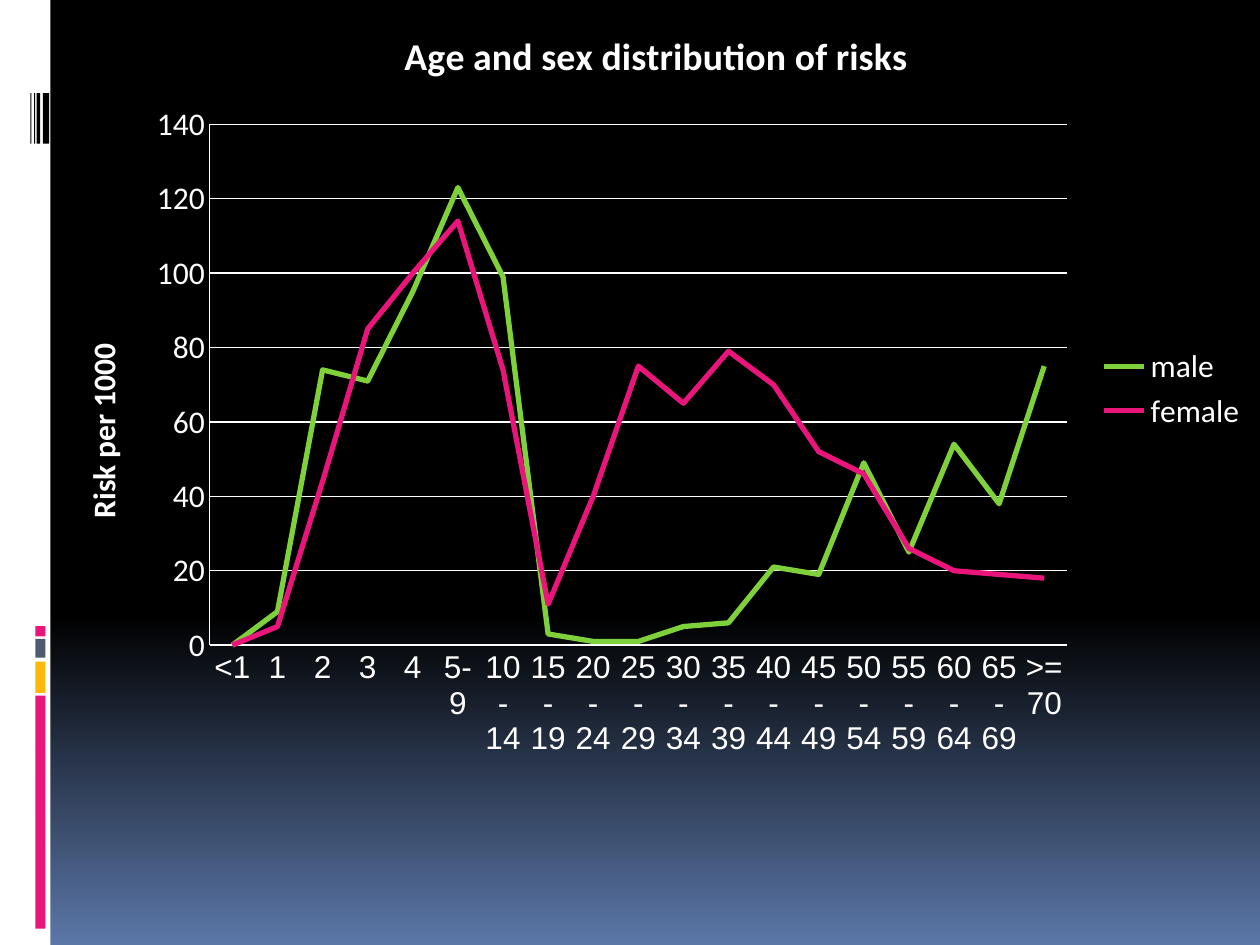
from lxml import etree
from pptx import Presentation
from pptx import util as u
from pptx.chart.data import CategoryChartData
from pptx.dml.color import RGBColor
from pptx.enum import chart as ch, shapes
from pptx.oxml.ns import qn

WHITE, BLACK, PINK, GREEN = "FFFFFF", "000000", "EA157A", "7FD13B"
AGES = (["<1", "1", "2", "3", "4", "5-9"]
        + [f"{a}-{a + 4}" for a in range(10, 70, 5)] + [">=70"])
RISKS = [
    ("male", GREEN, [0, 9, 74, 71, 95, 123, 99, 3, 1, 1, 5, 6, 21, 19, 49, 25, 54, 38, 75]),
    ("female", PINK, [0, 5, 44, 85, 100, 114, 74, 11, 40, 75, 65, 79, 70, 52, 46, 26, 20, 19, 18]),
]


def rgb(code):
    return RGBColor.from_string(code)


def bar(slide, box, code):
    """Add a plain filled rectangle without an outline."""
    shape = slide.shapes.add_shape(shapes.MSO_SHAPE.RECTANGLE, *map(u.Inches, box))
    shape.shadow.inherit = False
    shape.fill.solid()
    shape.fill.fore_color.rgb = rgb(code)
    shape.line.fill.background()


def backdrop(slide):
    fill = slide.background.fill
    fill.gradient()
    fill.gradient_angle = 270
    for stop, (place, code) in zip(fill.gradient_stops, [(0.65, BLACK), (1, "5B77A8")]):
        stop.position = place
        stop.color.rgb = rgb(code)


def margin(slide, left, top, wide, high):
    """Draw the white side strip with its colour blocks and thin stripes."""
    bar(slide, (left, top, wide, high), WHITE)
    for y, tall, code in [(5.52, 1.85, PINK), (5.25, 0.25, "FEB80A"),
                          (5.07, 0.15, "4E5B6F"), (4.97, 0.08, PINK)]:
        bar(slide, (left + 0.7 * wide, top + y, 0.08, tall), code)
    for x, thick in [(0.34, 0.05), (0.29, 0.03), (0.27, 0.01), (0.24, 0.01)]:
        bar(slide, (left + x, top + 0.74, thick, 0.4), BLACK)


def style(font, size=18, bold=False, name="Calibri"):
    font.name, font.size, font.bold = name, u.Pt(size), bold
    font.color.rgb = rgb(WHITE)


def label(owner, words, size):
    """Give a chart or an axis a bold title."""
    frame = (owner.chart_title if hasattr(owner, "chart_title") else owner.axis_title).text_frame
    frame.text = words
    style(frame.paragraphs[0].runs[0].font, size, True)


def stroke(line, code, width):
    line.color.rgb = rgb(code)
    line.width = u.Pt(width)


def place(chart, x, y, w, h):
    """Fix the inner plot area, in shares of the chart."""
    area = chart.plots[0]._element.getparent()
    for old in area.findall(qn("c:layout")):
        area.remove(old)
    layout = etree.Element(qn("c:layout"))
    area.insert(0, layout)
    manual = etree.SubElement(layout, qn("c:manualLayout"))
    for tag, val in [("layoutTarget", "inner"), ("xMode", "edge"), ("yMode", "edge"),
                     ("x", x), ("y", y), ("w", w), ("h", h)]:
        etree.SubElement(manual, qn("c:" + tag)).set("val", str(val))


def graph(slide, box):
    data = CategoryChartData()
    data.categories = AGES
    for name, _, vals in RISKS:
        data.add_series(name, vals)
    chart = slide.shapes.add_chart(ch.XL_CHART_TYPE.LINE, *map(u.Inches, box), data).chart
    style(chart.font)
    label(chart, "Age and sex distribution of risks", 21.6)
    place(chart, 0.13, 0.16, 0.71, 0.67)

    chart.has_legend = True
    chart.legend.position = ch.XL_LEGEND_POSITION.RIGHT
    chart.legend.include_in_layout = False
    style(chart.legend.font)

    plot = chart.plots[0]
    plot.vary_by_categories = False
    for line, (_, code, _) in zip(plot.series, RISKS):
        line.smooth = False
        line.marker.style = ch.XL_MARKER_STYLE.NONE
        stroke(line.format.line, code, 3)

    ages, risk = chart.category_axis, chart.value_axis
    for axis, face in [(ages, "Arial"), (risk, "Calibri")]:
        axis.major_tick_mark = axis.minor_tick_mark = ch.XL_TICK_MARK.NONE
        style(axis.tick_labels.font, name=face)
        stroke(axis.format.line, WHITE, 0.75)
    ages.tick_labels.number_format = "@"
    ages.tick_labels.number_format_is_linked = False
    risk.minimum_scale, risk.maximum_scale, risk.major_unit = 0, 140, 20
    risk.has_major_gridlines = True
    stroke(risk.major_gridlines.format.line, WHITE, 0.75)
    label(risk, "Risk per 1000", 18)


def main():
    deck = Presentation()
    deck.slide_width, deck.slide_height = u.Inches(10), u.Inches(7.5)
    slide = deck.slides.add_slide(deck.slide_layouts[6])
    backdrop(slide)
    margin(slide, 0, 0, 0.4, 7.5)
    graph(slide, (0.42, 0, 9.58, 6.17))
    deck.save("out.pptx")


if __name__ == "__main__":
    main()
